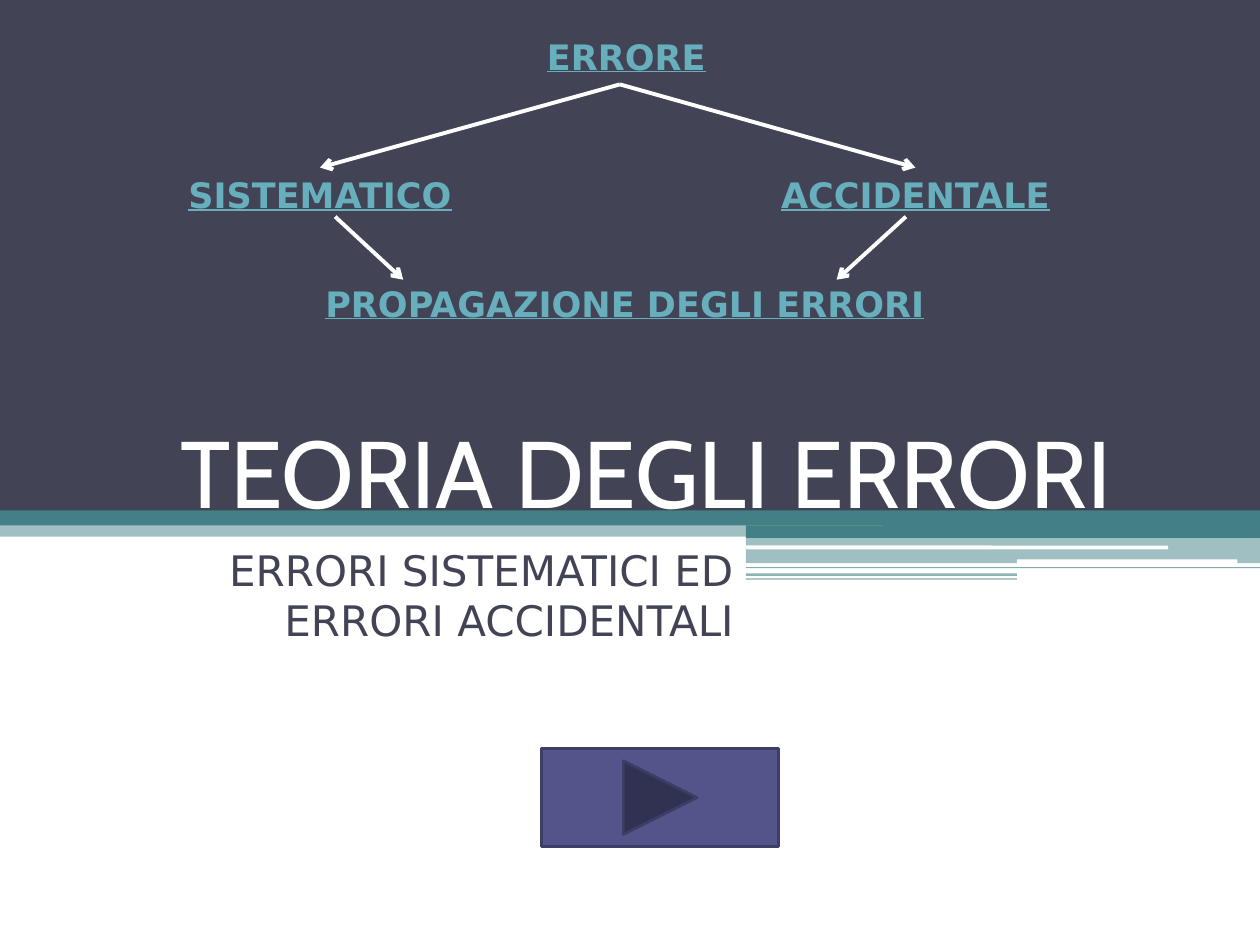
from dataclasses import dataclass

from lxml import etree
from pptx import Presentation
from pptx.dml.color import RGBColor
from pptx.enum.shapes import MSO_CONNECTOR, MSO_SHAPE
from pptx.enum.text import MSO_ANCHOR, MSO_AUTO_SIZE, PP_ALIGN
from pptx.oxml.ns import qn
from pptx.util import Inches, Pt

RECTANGLE, ROUNDED = MSO_SHAPE.RECTANGLE, MSO_SHAPE.ROUNDED_RECTANGLE
NEXT_BUTTON = MSO_SHAPE.ACTION_BUTTON_FORWARD_OR_NEXT
STRAIGHT = MSO_CONNECTOR.STRAIGHT
CENTER, RIGHT = PP_ALIGN.CENTER, PP_ALIGN.RIGHT
BOTTOM = MSO_ANCHOR.BOTTOM
FIT_SHAPE, NO_FIT = MSO_AUTO_SIZE.SHAPE_TO_FIT_TEXT, MSO_AUTO_SIZE.NONE
TOP_SIDE, BOTTOM_SIDE = 0, 2
TITLE_ONLY = 5

COLORS = {
    "dark": "424456", "teal": "438086", "white": "FFFFFF", "link": "67AFBD",
    "outline": "4C4D85", "button": "53548A", "button_line": "3D3E66",
}
TITLE_FONT, BODY_FONT = "Cabin", "DejaVu Sans"

# The slide is a grid of 1000 columns by 750 rows
COLUMNS, ROWS = 1000, 750
WIDTH, HEIGHT = Inches(10), Inches(7.5)


@dataclass
class Box:
    left: float
    top: float
    width: float
    height: float

    def inner(self, left, top, width, height):
        return Box(self.left + left, self.top + top, width, height)

    def point(self, column, row):
        return (round((self.left + column) * WIDTH / COLUMNS),
                round((self.top + row) * HEIGHT / ROWS))

    def extent(self):
        return (*self.point(0, 0), round(self.width * WIDTH / COLUMNS),
                round(self.height * HEIGHT / ROWS))


def color(name):
    return RGBColor.from_string(COLORS[name])


def add_block(slide, box, fill, opacity=100, kind=RECTANGLE):
    shape = slide.shapes.add_shape(kind, *box.extent())
    shape.shadow.inherit = False
    shape.fill.solid()
    shape.fill.fore_color.rgb = color(fill)
    shape.line.fill.background()
    if opacity < 100:
        tint = shape.element.spPr.find(f".//{qn('a:srgbClr')}")
        etree.SubElement(tint, qn("a:alpha")).set("val", str(opacity * 1000))
    return shape


def write(shape, text, size, font, fill, align):
    frame = shape.text_frame
    frame.text = text
    frame.word_wrap = True
    paragraph = frame.paragraphs[0]
    paragraph.alignment = align
    run = paragraph.runs[0]
    run.font.size, run.font.name = Pt(size), font
    run.font.color.rgb = color(fill)
    return paragraph, run


def add_arrow(slide, start, end):
    arrow = slide.shapes.add_connector(STRAIGHT, *start, *end)
    arrow.line.color.rgb = color("white")
    arrow.line.width = Pt(2.25)
    properties = arrow.element.spPr
    etree.SubElement(properties.find(qn("a:ln")), qn("a:tailEnd")).set("type", "arrow")
    etree.SubElement(properties, qn("a:effectLst"))
    return arrow


def add_label(slide, box, text):
    label = slide.shapes.add_textbox(*box.extent())
    run = write(label, text, 20, BODY_FONT, "link", CENTER)[1]
    run.font.bold = run.font.underline = True
    label.text_frame.auto_size = FIT_SHAPE
    # Thin letter outline
    outline = etree.Element(qn("a:ln"), w=str(Pt(0.83)))
    solid = etree.SubElement(outline, qn("a:solidFill"))
    etree.SubElement(solid, qn("a:srgbClr")).set("val", COLORS["outline"])
    label.element.find(f".//{qn('a:rPr')}").insert(0, outline)
    return label


def add_bands(slide, box):
    """Stripes between the dark header and the white lower half."""
    split, step = 592, 807
    right = box.width - split
    bands = [
        (split, 19, right, 10, "teal", 100, RECTANGLE),
        (split, 28, right, 21, "teal", 50, RECTANGLE),
        (split, 52, right, 1, "teal", 65, RECTANGLE),
        (split, 57, step - split, 2, "teal", 60, RECTANGLE),
        (split, 61, step - split, 1, "teal", 65, RECTANGLE),
        (split, 35, 335, 3, "white", 100, ROUNDED),
        (step, 46, 175, 4, "white", 100, ROUNDED),
        (0, 1, box.width, 27, "teal", 50, RECTANGLE),
        (0, 4, box.width, 15, "teal", 100, RECTANGLE),
        (701, 0, box.width - 701, 27, "teal", 100, RECTANGLE),
    ]
    for left, top, width, height, fill, opacity, kind in bands:
        add_block(slide, box.inner(left, top, width, height), fill, opacity, kind)


def add_titles(slide, box):
    # Title, brought in front of the header
    title = slide.shapes.title
    title.element.getparent().append(title.element)
    title.left, title.top, title.width, title.height = box.inner(0, 0, 925, 161).extent()
    write(title, "TEORIA DEGLI ERRORI", 54, TITLE_FONT, "white", CENTER)
    title.text_frame.vertical_anchor = BOTTOM
    title.text_frame.auto_size = NO_FIT

    # Subtitle
    subtitle = slide.shapes.add_textbox(*box.inner(0, 164, 542, 192).extent())
    paragraph = write(subtitle, "ERRORI SISTEMATICI ED ERRORI ACCIDENTALI",
                      24, BODY_FONT, "dark", RIGHT)[0]
    paragraph.space_before = Pt(3)


def add_error_tree(slide, box):
    row = 44
    root = add_label(slide, box.inner(312, 0, 172, row), "ERRORE")
    root.text_frame.margin_left = Inches(0.2)
    systematic = add_label(slide, box.inner(0, 110, 320, row), "SISTEMATICO")
    accidental = add_label(slide, box.inner(484, 110, 297, row), "ACCIDENTALE")
    add_label(slide, box.inner(109, 196, 586, row), "PROPAGAZIONE DEGLI ERRORI")

    # From the root to its two kinds
    for branch in (systematic, accidental):
        arrow = add_arrow(slide, (0, 0), (0, 0))
        arrow.begin_connect(root, BOTTOM_SIDE)
        arrow.end_connect(branch, TOP_SIDE)

    # From both kinds to the propagation
    for start, end in ((172, 226), (625, 570)):
        add_arrow(slide, box.point(start, 149), box.point(end, 199))


def add_next_button(slide, box):
    button = add_block(slide, box, "button", kind=NEXT_BUTTON)
    button.line.color.rgb = color("button_line")
    button.line.width = Pt(1.5)


def main():
    presentation = Presentation()
    presentation.slide_width, presentation.slide_height = WIDTH, HEIGHT
    slide = presentation.slides.add_slide(presentation.slide_layouts[TITLE_ONLY])
    add_bands(slide, Box(0, 398, COLUMNS, 64))
    add_block(slide, Box(0, 0, COLUMNS, 405), "dark")
    add_titles(slide, Box(50, 263, 925, 356))
    add_error_tree(slide, Box(94, 23, 781, 240))
    add_next_button(slide, Box(430, 594, 188, 78))
    presentation.save("out.pptx")


if __name__ == "__main__":
    main()
